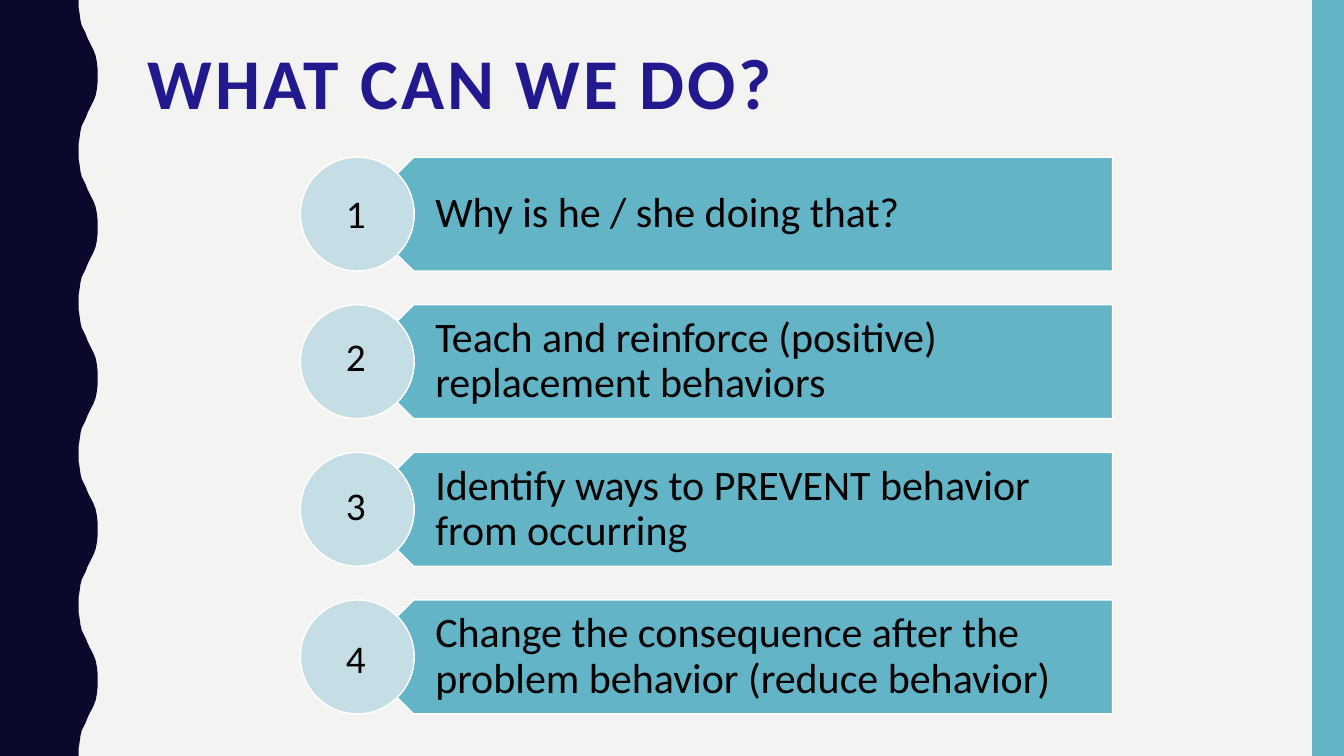
from pptx import Presentation
from pptx.dml.color import RGBColor
from pptx.enum.shapes import MSO_SHAPE
from pptx.enum.text import MSO_ANCHOR, PP_ALIGN
from pptx.util import Cm, Pt

NAVY = RGBColor(0x0B, 0x08, 0x2E)
INDIGO = RGBColor(0x22, 0x19, 0x8F)
TEAL = RGBColor(0x62, 0xB4, 0xC6)
PALE_TEAL = RGBColor(0xC5, 0xDE, 0xE5)
OFF_WHITE = RGBColor(0xF3, 0xF3, 0xF2)
WHITE = RGBColor(0xFF, 0xFF, 0xFF)
BLACK = RGBColor(0, 0, 0)

# Each step with the top of its number, in cm
STEPS = [
    ("Why is he / she doing that?", 4.65),
    ("Teach and reinforce (positive) replacement behaviors", 8.26),
    ("Identify ways to PREVENT behavior from occurring", 12.01),
    ("Change the consequence after the problem behavior (reduce behavior)", 15.85),
]
FIRST_TOP, ROW_PITCH, ROW_HEIGHT = 3.96, 3.72, 2.87

# Half a wave of the left border, trough to crest, in cm
HALF_WAVE = [
    (1.98, 0), (1.98, 0.18), (2.01, 0.36), (2.03, 0.51), (2.06, 0.64),
    (2.11, 0.74), (2.16, 0.84), (2.21, 0.97), (2.26, 1.07), (2.31, 1.17),
    (2.36, 1.27), (2.41, 1.4), (2.44, 1.55), (2.46, 1.73), (2.46, 1.9),
]
WAVE_LENGTH, WAVE_COUNT = 3.81, 5


def style_shape(shape, fill, outline=None):
    shape.shadow.inherit = False
    shape.fill.solid()
    shape.fill.fore_color.rgb = fill
    if outline is None:
        shape.line.fill.background()
    else:
        shape.line.color.rgb = outline
        shape.line.width = Pt(1)


def add_text(left, top, width, height, text, size, color=BLACK):
    box = slide.shapes.add_textbox(Cm(left), Cm(top), Cm(width), Cm(height))
    box.text_frame.word_wrap = True
    box.text_frame.text = text
    font = box.text_frame.paragraphs[0].runs[0].font
    font.name = "Calibri"
    font.size = Pt(size)
    font.color.rgb = color
    return box.text_frame


presentation = Presentation()
presentation.slide_width = Cm(33.87)
presentation.slide_height = Cm(19.05)
slide = presentation.slides.add_slide(presentation.slide_layouts[6])
slide.background.fill.solid()
slide.background.fill.fore_color.rgb = OFF_WHITE

# Wavy left border and right band
full_wave = HALF_WAVE + [(x, WAVE_LENGTH - y) for x, y in reversed(HALF_WAVE[:-1])]
outline_points = [
    (Cm(x), Cm(wave * WAVE_LENGTH + y))
    for wave in range(WAVE_COUNT) for x, y in full_wave
]
builder = slide.shapes.build_freeform(0, 0)
builder.add_line_segments(outline_points + [(0, Cm(19.05))], close=True)
style_shape(builder.convert_to_shape(), NAVY)

right_band = slide.shapes.add_shape(
    MSO_SHAPE.RECTANGLE, Cm(33.07), 0, Cm(0.8), Cm(19.05))
style_shape(right_band, TEAL)

# Title
title = add_text(3.48, 1.07, 28.27, 2.9, "WHAT CAN WE DO?", 51, INDIGO).paragraphs[0]
title.line_spacing = 0.9
title.runs[0].font.bold = True
title.runs[0]._r.get_or_add_rPr().set("spc", "200")

# Numbered steps
for index, (step, number_top) in enumerate(STEPS):
    top = FIRST_TOP + index * ROW_PITCH
    arrow = slide.shapes.add_shape(
        MSO_SHAPE.PENTAGON, Cm(8.99), Cm(top), Cm(19.05), Cm(ROW_HEIGHT))
    arrow.rotation = 180
    style_shape(arrow, TEAL, WHITE)

    frame = add_text(9.7, top, 18.31, ROW_HEIGHT, step, 30)
    frame.vertical_anchor = MSO_ANCHOR.MIDDLE
    frame.margin_left, frame.margin_right = Cm(1.27), Cm(0.58)
    frame.margin_top = frame.margin_bottom = Cm(0.3)
    frame.paragraphs[0].line_spacing = 0.9

    circle = slide.shapes.add_shape(
        MSO_SHAPE.OVAL, Cm(7.57), Cm(top), Cm(ROW_HEIGHT), Cm(ROW_HEIGHT))
    style_shape(circle, PALE_TEAL, WHITE)

    number = add_text(7.77, number_top, 2.39, 1.45, str(index + 1), 28)
    number.paragraphs[0].alignment = PP_ALIGN.CENTER

presentation.save("out.pptx")
